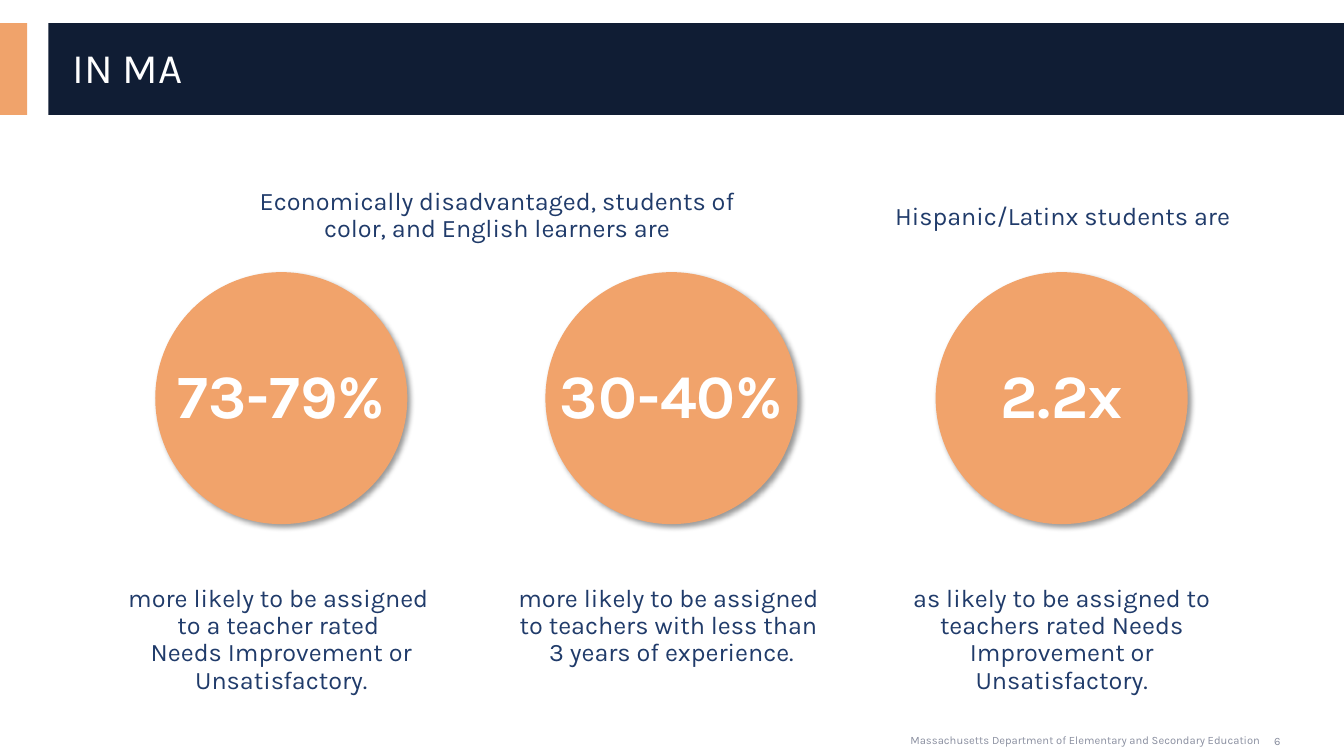
import lxml.etree
import pptx
import pptx.dml.color
import pptx.enum.shapes
import pptx.enum.text
import pptx.oxml.ns
import pptx.util

Inches = pptx.util.Inches
RGBColor = pptx.dml.color.RGBColor
Align = pptx.enum.text.PP_ALIGN
Anchor = pptx.enum.text.MSO_ANCHOR
Shape = pptx.enum.shapes.MSO_SHAPE

NAVY = RGBColor(0x10, 0x1D, 0x34)
BLUE = RGBColor(0x20, 0x3B, 0x6A)
ORANGE = RGBColor(0xF0, 0xA3, 0x6B)
CIRCLE_ORANGE = RGBColor(0xF1, 0xA3, 0x6B)
GREY = RGBColor(0x8A, 0x8F, 0xA0)
WHITE = RGBColor(0xFF, 0xFF, 0xFF)

FONT = "Karla"
CIRCLE_SIZE = 2.5
FIRST_CIRCLE_LEFT = 1.54
COLUMN_STEP = 3.87

HEADINGS = [
    ("Economically disadvantaged, students of color, and English learners are",
     (2.14, 1.82, 5.58, 0.66)),
    ("Hispanic/Latinx students are", (8.76, 1.97, 3.56, 0.51)),
]
STATISTICS = [
    ("73-79%", "more likely to be assigned \nto a teacher rated \n"
               "Needs Improvement or Unsatisfactory."),
    ("30-40%", "more likely to be assigned \nto teachers with less than \n"
               "3 years of experience."),
    ("2.2x", "as likely to be assigned to teachers rated Needs "
             "Improvement or Unsatisfactory."),
]


def add_text(page, text, box, size, color, align=Align.CENTER,
             anchor=Anchor.TOP, spacing=None, bold=False):
    frame = page.shapes.add_textbox(*map(Inches, box)).text_frame
    frame.word_wrap = True
    frame.vertical_anchor = anchor
    para = frame.paragraphs[0]
    para.text = text
    para.alignment = align
    para.line_spacing = spacing
    para.font.name = FONT
    para.font.size = pptx.util.Pt(size)
    para.font.bold = bold
    para.font.color.rgb = color


def add_filled(page, kind, box, color):
    shape = page.shapes.add_shape(kind, *map(Inches, box))
    shape.shadow.inherit = False
    shape.fill.solid()
    shape.fill.fore_color.rgb = color
    shape.line.fill.background()
    return shape


def add_drop_shadow(shape):
    qn = pptx.oxml.ns.qn
    effects = shape.element.spPr.find(qn("a:effectLst"))
    shadow = lxml.etree.SubElement(
        effects, qn("a:outerShdw"), blurRad=str(pptx.util.Pt(4)),
        dist=str(pptx.util.Pt(3)), dir=str(45 * 60000),
        algn="tl", rotWithShape="0")
    color = lxml.etree.SubElement(shadow, qn("a:srgbClr"), val="000000")
    lxml.etree.SubElement(color, qn("a:alpha"), val="40000")


def add_title_band(page, title, box):
    left, top, width, height = box
    add_filled(page, Shape.RECTANGLE, (left, top, 0.27, height), ORANGE)
    add_filled(page, Shape.RECTANGLE,
               (left + 0.48, top, width - 0.48, height), NAVY)
    add_text(page, title, (left + 0.62, top + 0.09, 12.44, 0.74), 30, WHITE,
             Align.LEFT, Anchor.MIDDLE, 0.9)


def add_statistic(page, value, caption, box):
    left, top, width, height = box
    center = left + width / 2
    circle = add_filled(page, Shape.OVAL,
                        (center - CIRCLE_SIZE / 2, top, CIRCLE_SIZE, CIRCLE_SIZE),
                        CIRCLE_ORANGE)
    add_drop_shadow(circle)
    add_text(page, value, (center - 1.45, top + 0.79, 2.9, 0.84), 44, WHITE,
             bold=True)
    add_text(page, caption, (left, top + height - 1.28, width, 1.28), 18, BLUE,
             spacing=0.9)


def add_footer(page, owner, number, box):
    left, top, width, height = box
    add_text(page, owner, (left, top + 0.08, width, 0.24), 8, GREY, Align.LEFT)
    add_text(page, number, (left + width - 0.5, top, 0.5, height), 8, GREY,
             anchor=Anchor.MIDDLE)


def main():
    deck = pptx.Presentation()
    deck.slide_width = Inches(13.33)
    deck.slide_height = Inches(7.5)
    page = deck.slides.add_slide(deck.slide_layouts[6])

    add_title_band(page, "IN MA", (0, 0.23, 13.33, 0.91))
    for heading, box in HEADINGS:
        add_text(page, heading, box, 18, BLUE, spacing=0.9)
    column_width = 3.45
    first_left = FIRST_CIRCLE_LEFT - (column_width - CIRCLE_SIZE) / 2
    for index, (value, caption) in enumerate(STATISTICS):
        add_statistic(page, value, caption,
                      (first_left + index * COLUMN_STEP, 2.7, column_width, 4.34))
    add_footer(page, "Massachusetts Department of Elementary and Secondary Education",
               "6", (8.93, 7.15, 3.99, 0.4))

    deck.save("out.pptx")


if __name__ == "__main__":
    main()
